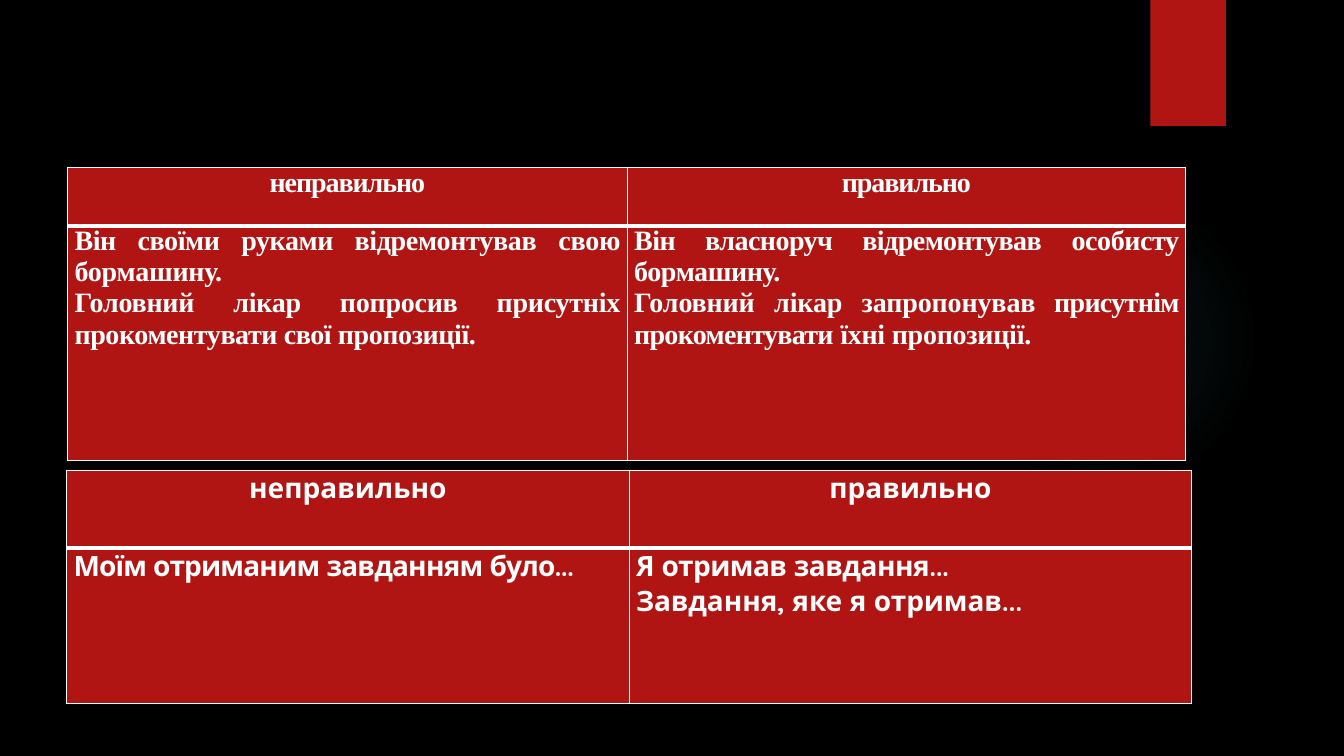
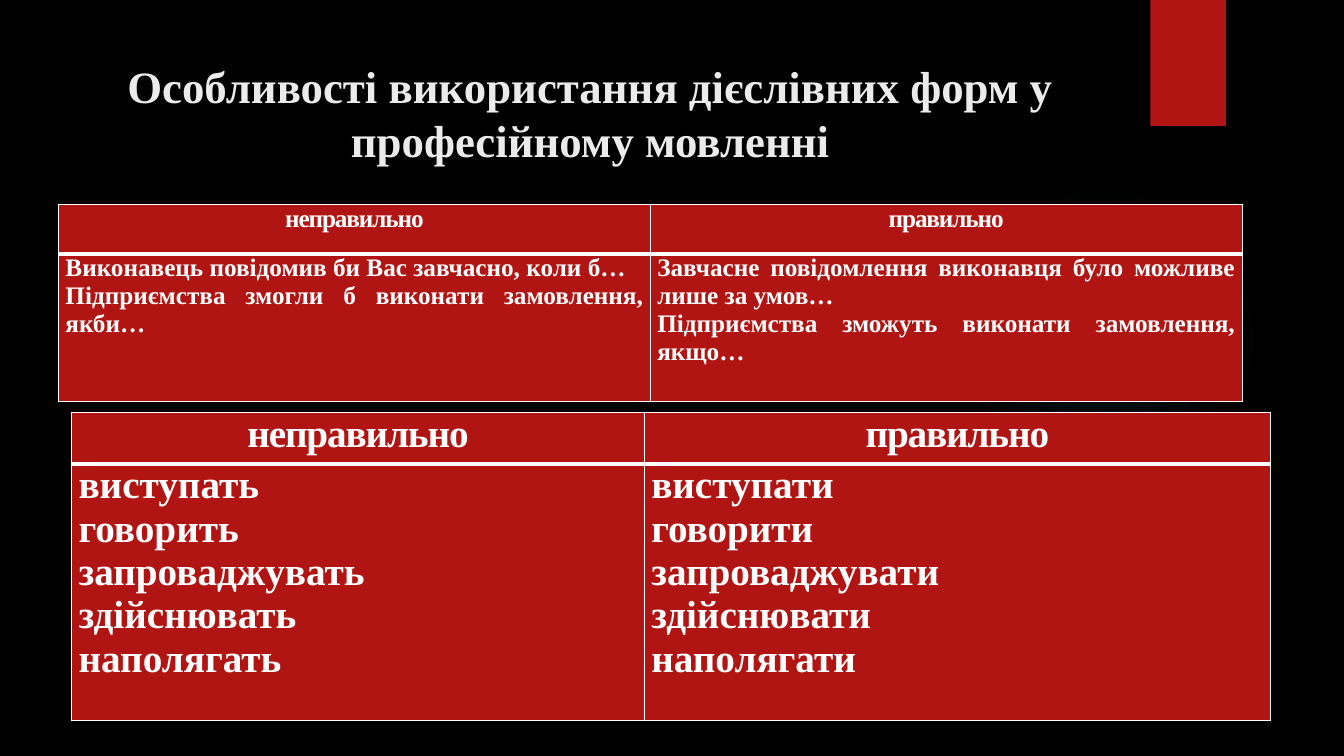
"""Build two dark slides with tables of incorrect and correct Ukrainian usage."""
from lxml import etree
from pptx import Presentation
from pptx.dml.color import RGBColor
from pptx.enum.shapes import MSO_SHAPE as SHAPE
from pptx.enum.text import MSO_ANCHOR as ANCHOR, PP_ALIGN as ALIGN
from pptx.oxml import parse_xml
from pptx.util import Inches, Pt

RED, WHITE, TITLE, GLOW = "B01513", "FFFFFF", "EBEBEB", "50B9C1"
SERIF, SANS = "Times New Roman", "Quicksand"
NS = 'xmlns:a="http://schemas.openxmlformats.org/drawingml/2006/main"'


def rgb(value):
    return RGBColor.from_string(value)


def add_text(p, text, size=20, font=SERIF, color=WHITE, spacing=0, align=ALIGN.JUSTIFY):
    p.alignment = align
    r = p.add_run()
    r.text = text
    r.font.size, r.font.name, r.font.bold = Pt(size), font, True
    r.font.color.rgb = rgb(color)
    r.font._element.set("spc", str(round(spacing * 100)))


prs = Presentation()
prs.slide_width, prs.slide_height = Inches(13.33), Inches(7.5)
master = prs.slide_master
master.background.fill.solid()
master.background.fill.fore_color.rgb = rgb("000000")

s1 = prs.slides.add_slide(prs.slide_layouts[6])
s2 = prs.slides.add_slide(prs.slide_layouts[5])

glow = s1.shapes.add_shape(SHAPE.OVAL, Inches(9.41), Inches(1.83), Inches(3.08), Inches(3.08))
tab = s1.shapes.add_shape(SHAPE.RECTANGLE, Inches(11.41), 0, Inches(0.75), Inches(1.25))
for number, sp in enumerate((glow, tab), 101):
    sp.shadow.inherit = False
    sp.line.fill.background()
    sp.fill.solid()
    sp.fill.fore_color.rgb = rgb(RED)
    sp.element.nvSpPr.cNvPr.id = number
    master.shapes.element.append(sp.element)

stops = "".join(
    f'<a:gs pos="{pos * 1000}"><a:srgbClr val="{GLOW}"><a:alpha val="{alpha * 1000}"/></a:srgbClr></a:gs>'
    for pos, alpha in ((0, 7), (36, 6), (69, 0))
)
solid = glow.element.spPr.find("{*}solidFill")
glow.element.spPr.replace(solid, parse_xml(
    f'<a:gradFill {NS}><a:gsLst>{stops}</a:gsLst><a:path path="circle">'
    '<a:fillToRect l="50000" t="50000" r="50000" b="50000"/></a:path></a:gradFill>'))

title = s2.shapes.title
title.left, title.top, title.width, title.height = Inches(0.71), Inches(0.53), Inches(10.29), Inches(1.5)
tf = title.text_frame
tf.word_wrap, tf.vertical_anchor = True, ANCHOR.TOP
add_text(tf.paragraphs[0], "Особливості використання дієслівних форм у професійному мовленні",
         size=32, color=TITLE, align=ALIGN.CENTER)

TABLES = [
    (s1, 0.66, 4.67, (5.58, 5.58), (0.77, 1.54), 20, SANS, 0,
     [[("Моїм отриманим завданням було...", -0.6)]],
     [[("Я отримав завдання...", -0.4)], [("Завдання, яке я отримав...", -0.1)]]),
    (s1, 0.67, 1.66, (5.55, 5.54), (0.58, 2.33), 20, SERIF, -0.8,
     [[("Він своїми руками відре", -0.3), ("монтував свою бормашину.", -0.2)],
      [("Головний лікар попросив присутніх", -0.2), (" прокоментувати свої пропозиції.", -0.3)]],
     [[("Він власноруч відремонтував", -0.4), (" особисту бормашину.", -0.3)],
      [("Головний лікар запропонував", -0.1), (" присутнім прокоментувати", -0.5),
       (" їхні пропозиції.", -0.2)]]),
    (s2, 0.58, 2.03, (5.87, 5.87), (0.49, 1.46), 18, SERIF, -0.8,
     [[("Виконавець повідомив би Вас завчасно, коли б…", 0)],
      [("Підприємства змогли б виконати замовлення, якби…", 0)]],
     [[("Завчасне повідомлення виконавця було можливе лише за умов…", 0)],
      [("Підприємства зможуть виконати замовлення, якщо…", 0)]]),
    (s2, 0.71, 4.09, (5.68, 6.21), (0.51, 2.55), 28, SERIF, -0.8,
     [[(verb + "ть", 0)] for verb in ("виступа", "говори", "запроваджува", "здійснюва", "наполяга")],
     [[(verb + "ти", 0)] for verb in ("виступа", "говори", "запроваджува", "здійснюва", "наполяга")]),
]

for s, left, top, cols, rows, size, font, head_spacing, wrong, right in TABLES:
    table = s.shapes.add_table(2, 2, Inches(left), Inches(top),
                               Inches(sum(cols)), Inches(sum(rows))).table
    table.horz_banding = False
    for column, width in zip(table.columns, cols):
        column.width = Inches(width)
    for row, height in zip(table.rows, rows):
        row.height = Inches(height)
    heads = [[[(head, head_spacing)]] for head in ("неправильно", "правильно")]
    for i, contents in enumerate((heads, (wrong, right))):
        for j, paragraphs in enumerate(contents):
            cell = table.cell(i, j)
            cell.margin_left = cell.margin_right = Inches(0.07)
            cell.margin_top = cell.margin_bottom = 0
            cell.fill.solid()
            cell.fill.fore_color.rgb = rgb(RED)
            tc_pr = cell._tc.get_or_add_tcPr()
            widths = {"L": 1, "R": 1, "T": 3 if i else 1, "B": 1 if i else 3}
            for k, (side, points) in enumerate(widths.items()):
                tc_pr.insert(k, etree.fromstring(
                    f'<a:ln{side} {NS} w="{Pt(points)}"><a:solidFill>'
                    f'<a:srgbClr val="{WHITE}"/></a:solidFill></a:ln{side}>'))
            tf = cell.text_frame
            for n, runs in enumerate(paragraphs):
                p = tf.add_paragraph() if n else tf.paragraphs[0]
                for text, spacing in runs:
                    add_text(p, text, size=size, font=font, spacing=spacing,
                             align=ALIGN.JUSTIFY if i else ALIGN.CENTER)

prs.save("out.pptx")
